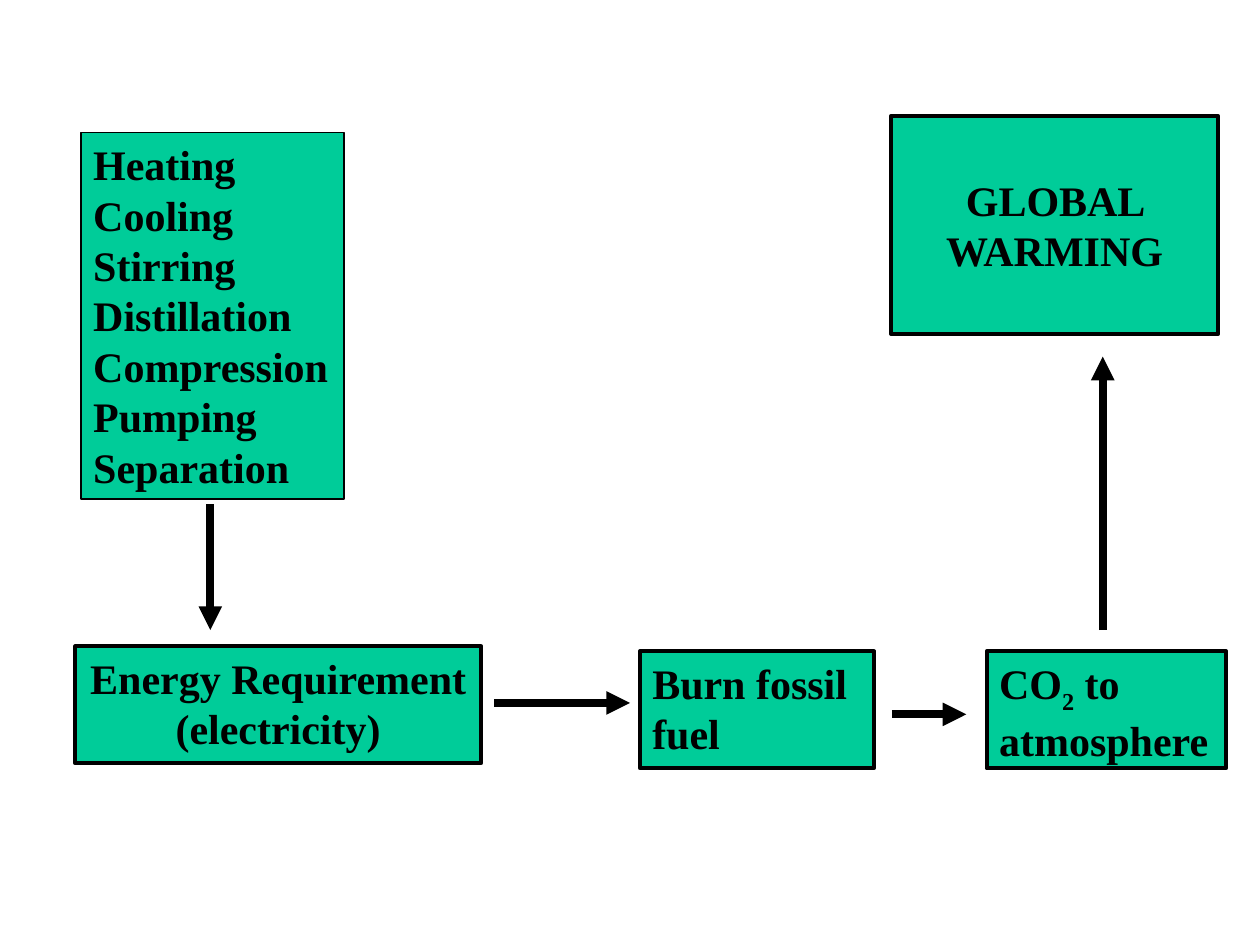
"""Build a flow chart slide leading from energy use to global warming."""
import pptx
import pptx.dml.color
import pptx.enum.shapes
import pptx.enum.text
import pptx.oxml.ns
import pptx.util
from lxml import etree
from pptx.util import Cm

GREEN = pptx.dml.color.RGBColor(0x00, 0xCC, 0x99)
BLACK = pptx.dml.color.RGBColor(0x00, 0x00, 0x00)
LEFT = pptx.enum.text.PP_ALIGN.LEFT
CENTER = pptx.enum.text.PP_ALIGN.CENTER
TOP = pptx.enum.text.MSO_ANCHOR.TOP
MIDDLE = pptx.enum.text.MSO_ANCHOR.MIDDLE


def write_run(paragraph, text, size=24, font="Times New Roman", color=BLACK, bold=True, subscript=False):
    run = paragraph.add_run()
    run.text = text
    run.font.size = pptx.util.Pt(size)
    run.font.name = font
    run.font.bold = bold
    run.font.color.rgb = color
    if subscript:
        run.font._element.set("baseline", "-25000")


presentation = pptx.Presentation()
presentation.slide_width = Cm(25.4)
presentation.slide_height = Cm(19.05)
slide = presentation.slides.add_slide(presentation.slide_layouts[6])

processes = ["Heating", "Cooling", "Stirring", "Distillation", "Compression", "Pumping", "Separation"]
boxes = [
    (1.63, 2.67, 5.31, 7.39, 1, LEFT, TOP, False, processes),
    (1.52, 13.03, 8.18, 2.36, 2.25, CENTER, TOP, False, ["Energy Requirement", "(electricity)"]),
    (12.9, 13.13, 4.72, 2.36, 2.25, LEFT, TOP, False, ["Burn fossil", "fuel"]),
    (19.89, 13.13, 4.83, 2.36, 2.25, LEFT, TOP, False, ["CO|2| to", "atmosphere"]),
    (17.96, 2.34, 6.6, 4.39, 2.25, CENTER, MIDDLE, True, ["GLOBAL WARMING"]),
]
for left, top, width, height, line_width, alignment, anchor, wrap, lines in boxes:
    shape = slide.shapes.add_shape(
        pptx.enum.shapes.MSO_SHAPE.RECTANGLE, Cm(left), Cm(top), Cm(width), Cm(height)
    )
    shape.shadow.inherit = False
    shape.fill.solid()
    shape.fill.fore_color.rgb = GREEN
    shape.line.color.rgb = BLACK
    shape.line.width = pptx.util.Pt(line_width)
    text_frame = shape.text_frame
    text_frame.word_wrap = wrap
    text_frame.vertical_anchor = anchor
    for index, line in enumerate(lines):
        paragraph = text_frame.add_paragraph() if index else text_frame.paragraphs[0]
        paragraph.alignment = alignment
        for position, part in enumerate(line.split("|")):
            write_run(paragraph, part, subscript=position % 2 == 1)

arrows = [
    (4.24, 10.16, 4.24, 12.7),
    (9.96, 14.17, 12.7, 14.17),
    (17.98, 14.4, 19.48, 14.4),
    (22.23, 12.7, 22.23, 7.19),
]
for begin_x, begin_y, end_x, end_y in arrows:
    connector = slide.shapes.add_connector(
        pptx.enum.shapes.MSO_CONNECTOR.STRAIGHT, Cm(begin_x), Cm(begin_y), Cm(end_x), Cm(end_y)
    )
    connector.line.color.rgb = BLACK
    connector.line.width = pptx.util.Pt(4.5)
    line_element = connector.line._get_or_add_ln()
    etree.SubElement(line_element, pptx.oxml.ns.qn("a:tailEnd"), type="triangle")
    etree.SubElement(connector._element.spPr, pptx.oxml.ns.qn("a:effectLst"))

presentation.save("out.pptx")
